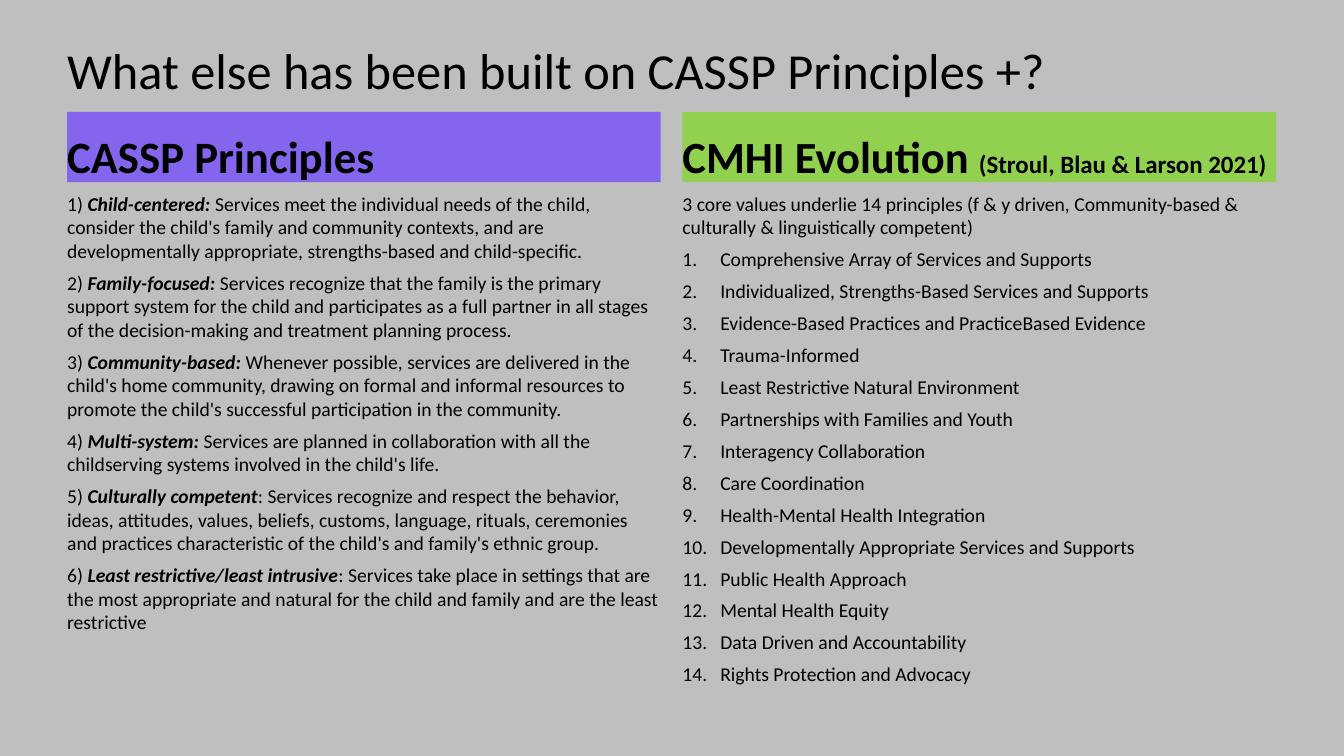
from pptx import Presentation
from pptx.dml.color import RGBColor
from pptx.enum.shapes import MSO_SHAPE
from pptx.enum.text import MSO_ANCHOR, PP_ALIGN
from pptx.oxml.ns import qn
from pptx.util import Pt
from lxml.etree import SubElement

HUES = {"back": "BFBFBF", "ink": "000000", "left": "8466EE", "right": "92D050"}
FONT = "Calibri"
LEFT, RIGHT, WIDTH = 48, 487.5, 424
HEAD_TOP, HEAD_TALL = 80, 50.2
BODY_TOP, BODY_TALL = 136.8, 381.6
INDENT = 27

VALUES = [
    ("Child-centered: ", "Services meet the individual needs of the child, consider the child's family and "
     "community contexts, and are developmentally appropriate, strengths-based and child-specific."),
    ("Family-focused: ", "Services recognize that the family is the primary support system for the child and "
     "participates as a full partner in all stages of the decision-making and treatment planning process."),
    ("Community-based: ", "Whenever possible, services are delivered in the child's home community, drawing on "
     "formal and informal resources to promote the child's successful participation in the community."),
    ("Multi-system: ", "Services are planned in collaboration with all the childserving systems involved in "
     "the child's life."),
    ("Culturally competent", ": Services recognize and respect the behavior, ideas, attitudes, values, beliefs, "
     "customs, language, rituals, ceremonies and practices characteristic of the child's and family's ethnic group."),
    ("Least restrictive/least intrusive", ": Services take place in settings that are the most appropriate and "
     "natural for the child and family and are the least restrictive"),
]
INTRO = ("3 core values underlie 14 principles (f & y driven, Community-based & culturally & "
         "linguistically competent)")
GOALS = [
    "Comprehensive Array of Services and Supports",
    "Individualized, Strengths-Based Services and Supports",
    "Evidence-Based Practices and PracticeBased Evidence",
    "Trauma-Informed",
    "Least Restrictive Natural Environment",
    "Partnerships with Families and Youth",
    "Interagency Collaboration",
    "Care Coordination",
    "Health-Mental Health Integration",
    "Developmentally Appropriate Services and Supports",
    "Public Health Approach",
    "Mental Health Equity",
    "Data Driven and Accountability",
    "Rights Protection and Advocacy",
]


def paint(fill, hue):
    fill.solid()
    fill.fore_color.rgb = RGBColor.from_string(HUES[hue])


def write(para, text, size=14, bold=False, slant=False):
    run = para.add_run()
    run.text = text
    font = run.font
    font.name, font.size, font.bold, font.italic = FONT, Pt(size), bold, slant
    font.color.rgb = RGBColor.from_string(HUES["ink"])


def setup(shape, anchor):
    frame = shape.text_frame
    frame.word_wrap = True
    frame.vertical_anchor = anchor
    frame.margin_left = frame.margin_top = frame.margin_right = frame.margin_bottom = 0
    para = frame.paragraphs[0]
    para.alignment = PP_ALIGN.LEFT
    return frame, para


def add_box(slide, left, top, width, tall, anchor=MSO_ANCHOR.TOP):
    return setup(slide.shapes.add_textbox(Pt(left), Pt(top), Pt(width), Pt(tall)), anchor)


def add_head(slide, left, hue, parts):
    bar = slide.shapes.add_shape(MSO_SHAPE.RECTANGLE, Pt(left), Pt(HEAD_TOP), Pt(WIDTH), Pt(HEAD_TALL))
    bar.shadow.inherit = False
    bar.line.fill.background()
    paint(bar.fill, hue)
    para = setup(bar, MSO_ANCHOR.BOTTOM)[1]
    for text, size in parts:
        write(para, text, size=size, bold=True)


def add_para(frame):
    para = frame.add_paragraph()
    para.space_before = Pt(6)
    return para


def number(para):
    props = para._p.get_or_add_pPr()
    props.set("marL", str(Pt(INDENT)))
    props.set("indent", str(-Pt(INDENT)))
    SubElement(props, qn("a:buFont"), typeface="+mj-lt")
    SubElement(props, qn("a:buAutoNum"), type="arabicPeriod")


def add_values(slide):
    frame, first = add_box(slide, LEFT, BODY_TOP, WIDTH, BODY_TALL)
    for count, (name, text) in enumerate(VALUES, 1):
        para = first if count == 1 else add_para(frame)
        write(para, f"{count}) ")
        write(para, name, bold=True, slant=True)
        write(para, text)


def add_goals(slide):
    frame, first = add_box(slide, RIGHT, BODY_TOP, WIDTH, BODY_TALL)
    write(first, INTRO)
    for goal in GOALS:
        para = add_para(frame)
        number(para)
        write(para, goal)


def main():
    deck = Presentation()
    deck.slide_width, deck.slide_height = Pt(960), Pt(540)
    slide = deck.slides.add_slide(deck.slide_layouts[6])
    paint(slide.background.fill, "back")
    title = add_box(slide, LEFT, 21.6, 864, 56.2, MSO_ANCHOR.MIDDLE)[1]
    write(title, "What else has been built on CASSP Principles +?", size=36)
    add_head(slide, LEFT, "left", [("CASSP Principles", 32)])
    add_values(slide)
    add_head(slide, RIGHT, "right", [("CMHI Evolution ", 31.8), ("(Stroul, Blau & Larson 2021)", 17.8)])
    add_goals(slide)
    deck.save("out.pptx")


if __name__ == "__main__":
    main()
